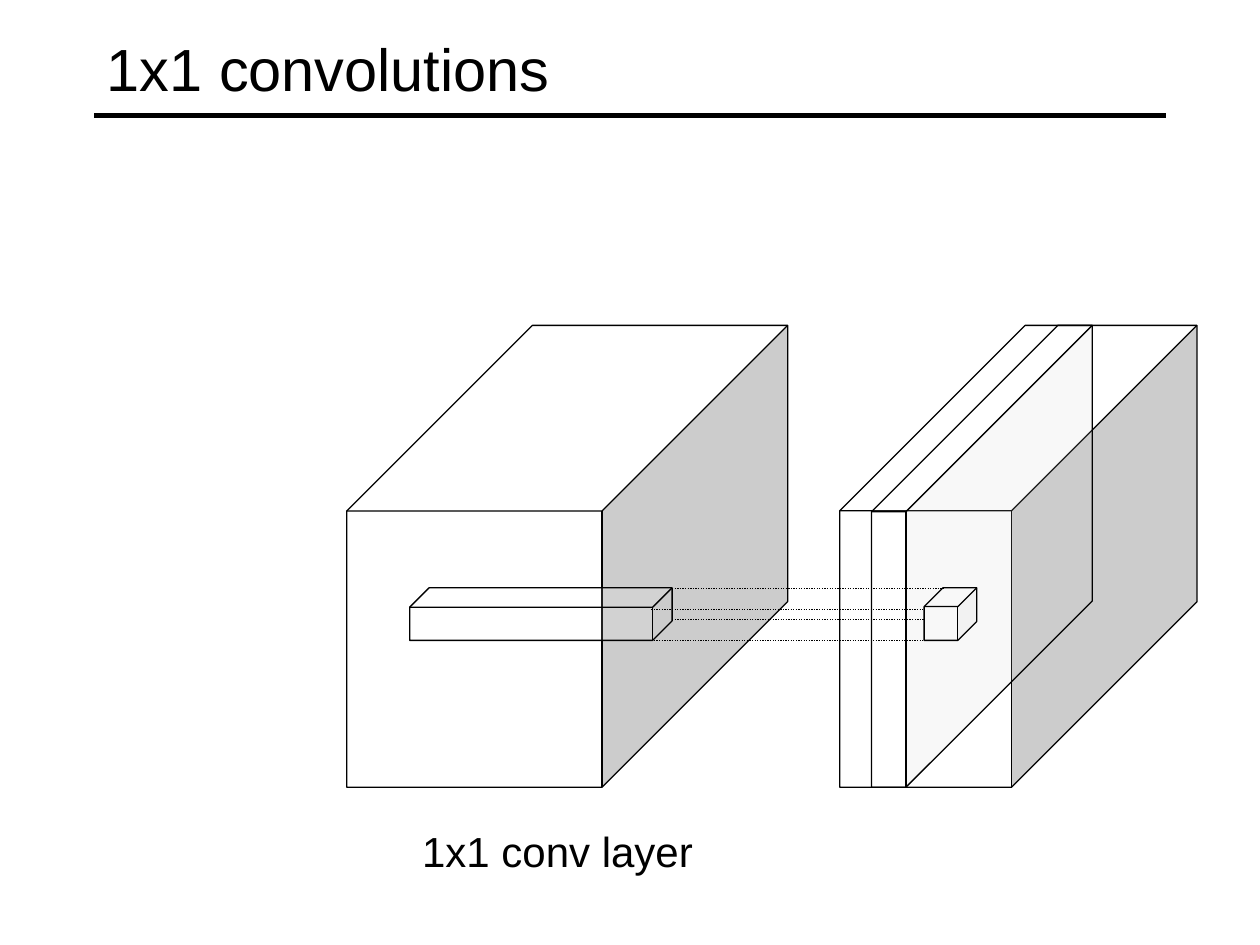
from lxml.etree import SubElement
from pptx import Presentation
from pptx.dml.color import RGBColor
from pptx.enum.dml import MSO_LINE
from pptx.enum.shapes import MSO_CONNECTOR, MSO_SHAPE
from pptx.enum.text import MSO_ANCHOR, MSO_AUTO_SIZE, PP_ALIGN
from pptx.oxml.ns import qn
from pptx.util import Cm, Pt

INK = "000000"
PAPER = "FFFFFF"


def paint(color, code):
    color.rgb = RGBColor.from_string(code)


class Sketch:
    """Draws styled elements on the current slide."""

    def __init__(self, slide, font="Arial"):
        self.slide = slide
        self.font = font

    def style(self, frame, text, size):
        frame.text = text
        para = frame.paragraphs[0]
        para.alignment = PP_ALIGN.LEFT
        para.font.name = self.font
        para.font.size = Pt(size)
        paint(para.font.color, INK)

    def title(self, text, left, top, width, height):
        title = self.slide.shapes.title
        title.left, title.top = Cm(left), Cm(top)
        title.width, title.height = Cm(width), Cm(height)
        title.text_frame.vertical_anchor = MSO_ANCHOR.MIDDLE
        self.style(title.text_frame, text, 34)

    def label(self, text, left, top, width, height):
        box = self.slide.shapes.add_textbox(Cm(left), Cm(top), Cm(width), Cm(height))
        box.text_frame.word_wrap = False
        box.text_frame.auto_size = MSO_AUTO_SIZE.SHAPE_TO_FIT_TEXT
        self.style(box.text_frame, text, 24)

    def cube(self, left, top, width, height, depth, alpha=None):
        cube = self.slide.shapes.add_shape(
            MSO_SHAPE.CUBE, Cm(left), Cm(top), Cm(width), Cm(height))
        cube.adjustments[0] = depth
        cube.shadow.inherit = False
        cube.fill.solid()
        paint(cube.fill.fore_color, PAPER)
        if alpha:
            tone = cube.fill._xPr.find(qn("a:solidFill"))[0]
            SubElement(tone, qn("a:alpha"), val=str(alpha * 1000))
        paint(cube.line.color, INK)
        cube.line.width = Pt(0.75)

    def line(self, left, right, level, width=0.75, dash=None):
        line = self.slide.shapes.add_connector(
            MSO_CONNECTOR.STRAIGHT, Cm(left), Cm(level), Cm(right), Cm(level))
        paint(line.line.color, INK)
        line.line.width = Pt(width)
        if dash:
            line.line.dash_style = dash
        SubElement(line._element.spPr, qn("a:effectLst"))


def main():
    deck = Presentation()
    deck.slide_width, deck.slide_height = Cm(25.4), Cm(19.05)
    sketch = Sketch(deck.slides.add_slide(deck.slide_layouts[5]))

    sketch.line(1.9, 23.5, 2.33, width=3)
    sketch.title("1x1 convolutions", 1.9, 0.21, 21.6, 2.33)

    top, height = 6.56, 9.31
    row, side = 11.85, 1.06
    sketch.cube(6.99, top, 8.89, height, 0.421)
    sketch.cube(8.26, row, 5.29, side, 0.369, alpha=13)
    sketch.label("1x1 conv layer", 8.26, 16.51, 6.05, 1.27)
    sketch.cube(16.93, top, 7.2, height, 0.519)
    sketch.cube(17.57, top, 4.45, height, 0.844, alpha=13)
    sketch.cube(18.63, row, side, side, 0.358, alpha=13)

    back, front, end = 13.55, 13.13, 18.63
    for left, right, level in (
        (back, 19.05, 11.86),
        (front, end, 12.28),
        (front, end, 12.91),
        (back, end, 12.49),
    ):
        sketch.line(left, right, level, dash=MSO_LINE.ROUND_DOT)

    deck.save("out.pptx")


if __name__ == "__main__":
    main()
